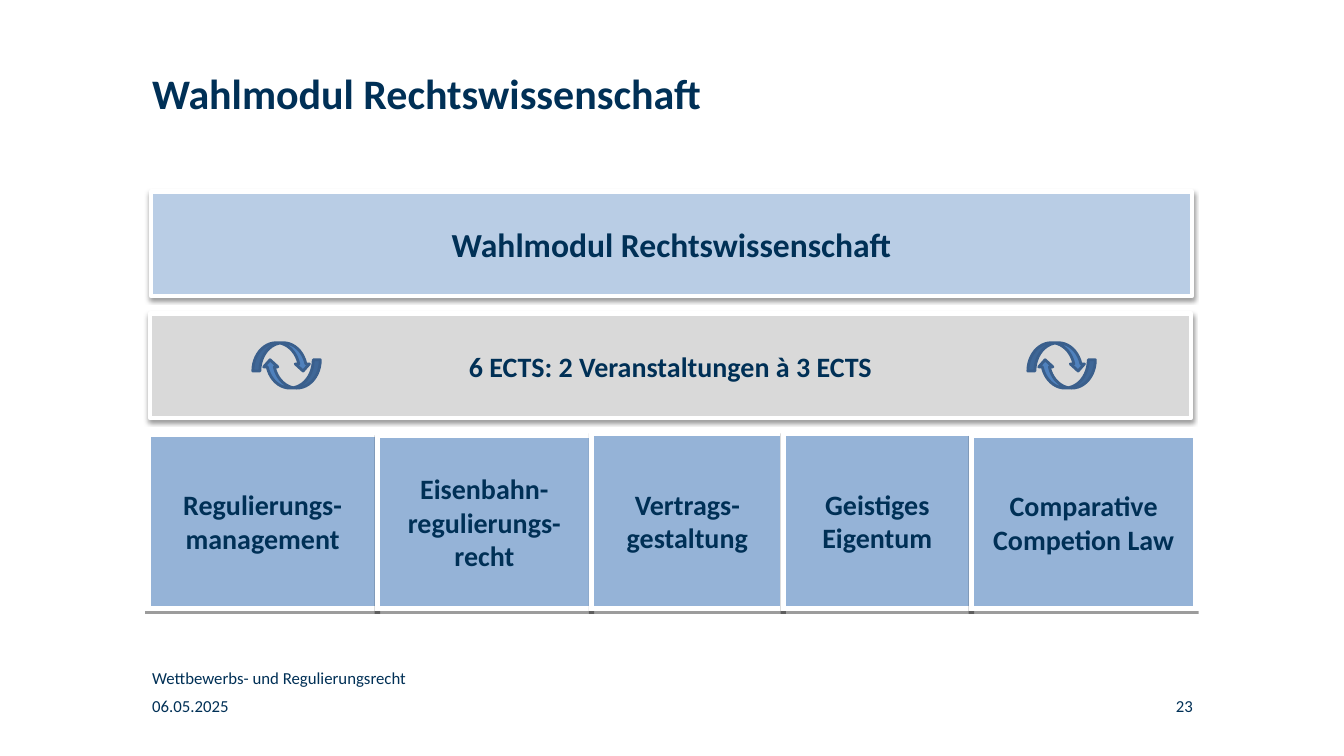
from itertools import accumulate
from lxml import etree
from pptx import Presentation
from pptx import util as u
from pptx.dml.color import RGBColor
from pptx.enum import shapes, text
from pptx.oxml import ns

THEME = {
    "font": "Calibri",
    "ink": "003056", "white": "FFFFFF",
    "header": "B9CDE5", "rule": "D9D9D9", "course": "95B3D7",
    "arrow": "4F81BD", "arrow_line": "3A5F8C",
    "title_size": 30, "header_size": 24, "body_size": 20, "footer_size": 12,
    "band_line": 3, "course_line": 3.82, "arrow_line_width": 2,
    "band_shadow": (3.1, 1.6), "course_shadow": (0, 2),
}

LEFT = text.PP_ALIGN.LEFT
LABELS = [
    ("Wahlmodul Rechtswissenschaft", (108.7, 48.2, 508.3, 98.6), "title_size", True, LEFT),
    ("06.05.2025", (108.7, 497, 223.9, 14.4), "footer_size", False, LEFT),
    ("Wettbewerbs- und Regulierungsrecht", (108.7, 477, 445, 20), "footer_size", False, LEFT),
    ("23", (741.6, 497, 110.9, 14.4), "footer_size", False, text.PP_ALIGN.RIGHT),
]
BANDS = [
    ("Wahlmodul Rechtswissenschaft", (108, 136.8, 743.8, 74.9), "header", "header_size"),
    ("6 ECTS: 2 Veranstaltungen à 3 ECTS", (107.3, 223.9, 743.8, 74.9), "rule", "body_size"),
]
COURSES = [
    ("Regulierungs-management", 164, 310.3),
    ("Eisenbahn-regulierungs-recht", 153, 311),
    ("Vertrags-gestaltung", 137, 309.5),
    ("Geistiges Eigentum", 134.5, 309.5),
    ("Comparative Competion Law", 160.5, 311.3),
]
COURSES_LEFT, COURSES_BOTTOM = 105.7, 434.6
CYCLE_LEFTS = (180.7, 734.6)
CYCLE_TOP, ARROW_SIZE = 244.8, (41, 20.2)
CYCLE_HALVES = [(0, 0, 0), (7.2, 12.2, 180)]


def points(*values):
    return [u.Pt(value) for value in values]


def color(name):
    return RGBColor.from_string(THEME[name])


def write(frame, content, size, bold, align):
    frame.word_wrap = True
    paragraph = frame.paragraphs[0]
    paragraph.text = content
    paragraph.alignment = align
    paragraph.font.name = THEME["font"]
    paragraph.font.size = u.Pt(THEME[size])
    paragraph.font.bold = bold
    paragraph.font.color.rgb = color("ink")


def add_label(slide, content, box, size, bold, align):
    frame = slide.shapes.add_textbox(*points(*box)).text_frame
    frame.margin_left = frame.margin_right = frame.margin_top = frame.margin_bottom = 0
    write(frame, content, size, bold, align)


def add_figure(slide, kind, box, fill, line, width):
    shape = slide.shapes.add_shape(kind, *points(*box))
    shape.shadow.inherit = False
    shape.fill.solid()
    shape.fill.fore_color.rgb = color(fill)
    shape.line.color.rgb = color(line)
    shape.line.width = u.Pt(THEME[width])
    return shape


def add_shadow(shape, blur, distance):
    effects = shape._element.spPr.find(ns.qn("a:effectLst"))
    shadow = etree.SubElement(
        effects, ns.qn("a:outerShdw"), blurRad=str(u.Pt(blur)), dist=str(u.Pt(distance)),
        dir="5400000", rotWithShape="0")
    black = etree.SubElement(shadow, ns.qn("a:srgbClr"), val="000000")
    etree.SubElement(black, ns.qn("a:alpha"), val="38000")


def square_corners(shape):
    outline = shape._element.spPr.find(ns.qn("a:ln"))
    etree.SubElement(outline, ns.qn("a:miter"), lim="800000")


def add_block(slide, content, box, fill, size, style):
    shape = add_figure(slide, shapes.MSO_SHAPE.RECTANGLE, box, fill, "white", style + "_line")
    add_shadow(shape, *THEME[style + "_shadow"])
    shape.text_frame.vertical_anchor = text.MSO_ANCHOR.MIDDLE
    write(shape.text_frame, content, size, True, text.PP_ALIGN.CENTER)
    return shape


def add_cycle(slide, left):
    for dx, dy, rotation in CYCLE_HALVES:
        box = (left + dx, CYCLE_TOP + dy, *ARROW_SIZE)
        arrow = add_figure(slide, shapes.MSO_SHAPE.CURVED_DOWN_ARROW, box,
                           "arrow", "arrow_line", "arrow_line_width")
        arrow.rotation = rotation


def main():
    presentation = Presentation()
    presentation.slide_width, presentation.slide_height = points(960.48, 540)
    slide = presentation.slides.add_slide(presentation.slide_layouts[6])
    for label in LABELS:
        add_label(slide, *label)
    for band in BANDS:
        add_block(slide, *band, "band")
    lefts = accumulate((width for _, width, _ in COURSES), initial=COURSES_LEFT)
    for left, (name, width, top) in zip(lefts, COURSES):
        box = (left, top, width, COURSES_BOTTOM - top)
        square_corners(add_block(slide, name, box, "course", "body_size", "course"))
    for left in CYCLE_LEFTS:
        add_cycle(slide, left)
    presentation.save("out.pptx")


if __name__ == "__main__":
    main()
